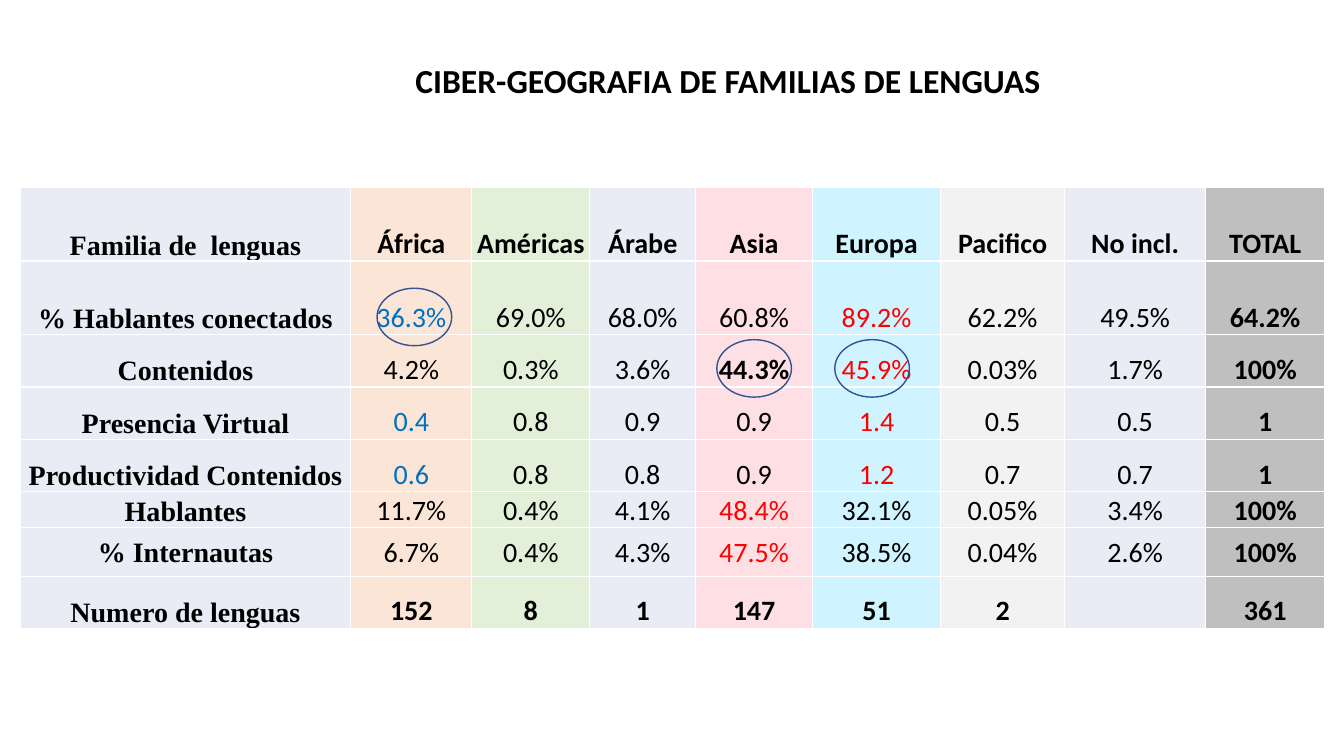
import dataclasses

import lxml.etree
import pptx
import pptx.dml.color
import pptx.enum.shapes
import pptx.enum.text
import pptx.oxml.ns
import pptx.util

Inches = pptx.util.Inches
Pt = pptx.util.Pt
ANCHOR = pptx.enum.text.MSO_ANCHOR
ALIGN = pptx.enum.text.PP_ALIGN


@dataclasses.dataclass(frozen=True)
class Theme:
    text: str = "000000"
    low: str = "0070C0"
    high: str = "FF0000"
    border: str = "FFFFFF"
    ring: str = "325491"
    columns: tuple = ("E9EBF5", "FBE5D6", "E2F0D9", "E9EBF5", "FEE0E4",
                      "CFF4FF", "F2F2F2", "E9EBF5", "BFBFBF")
    body_font: str = "Calibri"
    label_font: str = "Times New Roman"
    title_size: int = 24
    table_size: int = 20
    line_width: int = 1


THEME = Theme()

TITLE = "CIBER-GEOGRAFIA DE FAMILIAS DE LENGUAS"
ROWS = [
    ["Familia de  lenguas", "África", "Américas", "Árabe", "Asia", "Europa", "Pacifico", "No incl.", "TOTAL"],
    ["% Hablantes conectados", "36.3%", "69.0%", "68.0%", "60.8%", "89.2%", "62.2%", "49.5%", "64.2%"],
    ["Contenidos", "4.2%", "0.3%", "3.6%", "44.3%", "45.9%", "0.03%", "1.7%", "100%"],
    ["Presencia Virtual", "0.4", "0.8", "0.9", "0.9", "1.4", "0.5", "0.5", "1"],
    ["Productividad Contenidos", "0.6", "0.8", "0.8", "0.9", "1.2", "0.7", "0.7", "1"],
    ["Hablantes", "11.7%", "0.4%", "4.1%", "48.4%", "32.1%", "0.05%", "3.4%", "100%"],
    ["% Internautas", "6.7%", "0.4%", "4.3%", "47.5%", "38.5%", "0.04%", "2.6%", "100%"],
    ["Numero de lenguas", "152", "8", "1", "147", "51", "2", "", "361"],
]
COLUMN_WIDTHS = [3.28, 1.2, 1.17, 1.05, 1.16, 1.27, 1.23, 1.4, 1.18]
ROW_HEIGHTS = [0.73, 0.73, 0.52, 0.52, 0.52, 0.34, 0.48, 0.52]
LAST_ROW = len(ROWS) - 1
LAST_COLUMN = len(COLUMN_WIDTHS) - 1
INTERNAUTS_ROW = 6
LOW_CELLS = {(1, 1), (3, 1), (4, 1)}
HIGH_CELLS = {(1, 5), (2, 5), (3, 5), (4, 5), (5, 4), (6, 4)}
BOLD_CELLS = {(2, 4)}
RINGS = [(7.11, 3.37), (8.28, 3.37), (3.74, 2.86)]


def rgb(value):
    return pptx.dml.color.RGBColor.from_string(value)


def apply_format(target, values):
    for name, value in values.items():
        setattr(target, name, value)


def write_text(paragraph, text, color, paragraph_format, font_format):
    apply_format(paragraph, paragraph_format)
    run = paragraph.add_run()
    run.text = text
    apply_format(run.font, font_format)
    run.font.color.rgb = rgb(color)


def add_title(slide):
    title = slide.shapes.title
    apply_format(title, {"left": Inches(4.02), "top": Inches(0.54),
                         "width": Inches(6.46), "height": Inches(0.5)})
    apply_format(title.text_frame, {
        "word_wrap": False,
        "auto_size": pptx.enum.text.MSO_AUTO_SIZE.SHAPE_TO_FIT_TEXT,
        "vertical_anchor": ANCHOR.TOP,
    })
    write_text(title.text_frame.paragraphs[0], TITLE, THEME.text,
               {"alignment": ALIGN.LEFT},
               {"name": THEME.body_font, "size": Pt(THEME.title_size), "bold": True})


def add_borders(cell):
    properties = cell._tc.get_or_add_tcPr()
    for side in ("a:lnL", "a:lnR", "a:lnT", "a:lnB"):
        line = lxml.etree.SubElement(properties, pptx.oxml.ns.qn(side),
                                     w=str(Pt(THEME.line_width)))
        fill = lxml.etree.SubElement(line, pptx.oxml.ns.qn("a:solidFill"))
        lxml.etree.SubElement(fill, pptx.oxml.ns.qn("a:srgbClr"), val=THEME.border)


def cell_color(position):
    if position in LOW_CELLS:
        return THEME.low
    return THEME.high if position in HIGH_CELLS else THEME.text


def fill_cell(cell, row, column, text):
    add_borders(cell)
    cell.fill.solid()
    cell.fill.fore_color.rgb = rgb(THEME.columns[column])
    apply_format(cell, {
        "margin_left": Inches(0.05), "margin_right": Inches(0.05),
        "margin_top": 0, "margin_bottom": 0,
        "vertical_anchor": ANCHOR.MIDDLE if row == INTERNAUTS_ROW else ANCHOR.BOTTOM,
    })
    if text:
        bold = row in (0, LAST_ROW) or column in (0, LAST_COLUMN) or (row, column) in BOLD_CELLS
        write_text(cell.text_frame.paragraphs[0], text, cell_color((row, column)),
                   {"alignment": ALIGN.CENTER, "line_spacing": 1.07},
                   {"name": THEME.body_font if column else THEME.label_font,
                    "size": Pt(THEME.table_size), "bold": bold})


def add_language_table(slide):
    table = slide.shapes.add_table(
        len(ROWS), len(COLUMN_WIDTHS), Inches(0.2), Inches(1.86),
        Inches(sum(COLUMN_WIDTHS)), Inches(sum(ROW_HEIGHTS))).table
    apply_format(table, {"first_row": False, "horz_banding": False})
    for column, width in zip(table.columns, COLUMN_WIDTHS):
        column.width = Inches(width)
    for row, height in zip(table.rows, ROW_HEIGHTS):
        row.height = Inches(height)
    for row, texts in enumerate(ROWS):
        for column, text in enumerate(texts):
            fill_cell(table.cell(row, column), row, column, text)


def add_ring(slide, left, top):
    ring = slide.shapes.add_shape(pptx.enum.shapes.MSO_SHAPE.OVAL, Inches(left),
                                  Inches(top), Inches(0.74), Inches(0.57))
    ring.shadow.inherit = False
    ring.fill.background()
    ring.line.color.rgb = rgb(THEME.ring)
    ring.line.width = Pt(THEME.line_width)


def main():
    presentation = pptx.Presentation()
    apply_format(presentation, {"slide_width": Inches(13.33), "slide_height": Inches(7.5)})
    slide = presentation.slides.add_slide(presentation.slide_layouts.get_by_name("Title Only"))
    add_title(slide)
    add_language_table(slide)
    for left, top in RINGS:
        add_ring(slide, left, top)
    presentation.save("out.pptx")


if __name__ == "__main__":
    main()
